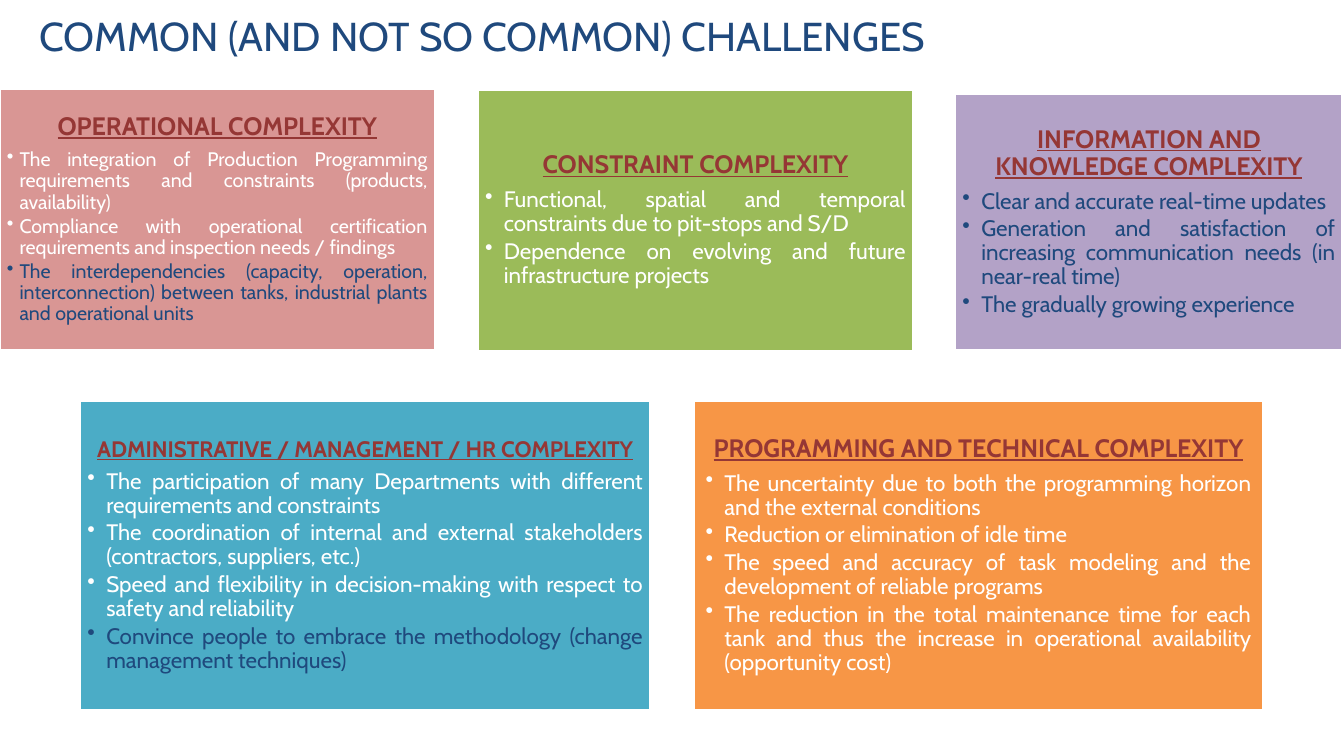
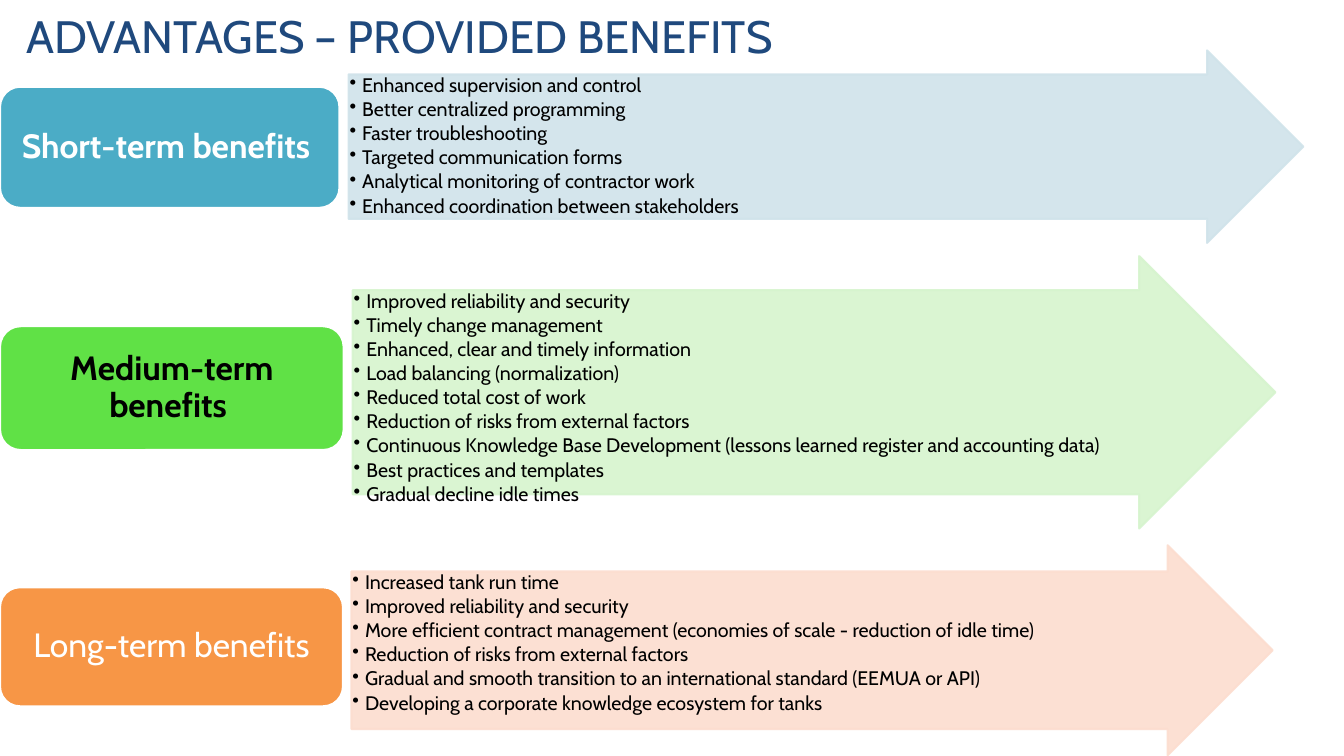
import pptx
import pptx.util
import pptx.dml.color
import pptx.enum.shapes
import pptx.enum.text
import pptx.oxml.ns
from lxml import etree

Pt = pptx.util.Pt
RGB = pptx.dml.color.RGBColor
SHAPE = pptx.enum.shapes.MSO_SHAPE
ALIGN = pptx.enum.text.PP_ALIGN
ANCHOR = pptx.enum.text.MSO_ANCHOR
qn = pptx.oxml.ns.qn

FONT = "Cabin"
NAVY = RGB(0x1F, 0x49, 0x7D)
MAROON = RGB(0x95, 0x37, 0x35)
WHITE = RGB(0xFF, 0xFF, 0xFF)
BLACK = RGB(0x00, 0x00, 0x00)
PINK = RGB(0xD9, 0x96, 0x94)
OLIVE = RGB(0x9B, 0xBB, 0x59)
LILAC = RGB(0xB3, 0xA2, 0xC7)
TEAL = RGB(0x4B, 0xAC, 0xC6)
ORANGE = RGB(0xF7, 0x96, 0x46)
GREEN = RGB(0x60, 0xE1, 0x46)
PALE_BLUE = RGB(0xD0, 0xE3, 0xEA)
PALE_GREEN = RGB(0xD6, 0xF4, 0xCE)
PALE_ORANGE = RGB(0xFC, 0xDD, 0xCF)

CHALLENGES = [
    dict(box=(0, 63.5, 310.5, 186.5), fill=PINK, heading="OPERATIONAL COMPLEXITY", size=14, items=[
        ("The integration of Production Programming requirements and constraints (products, availability)", WHITE),
        ("Compliance with operational certification requirements and inspection needs / findings", WHITE),
        ("The interdependencies (capacity, operation, interconnection) between tanks, "
         "industrial plants and operational units", NAVY)]),
    dict(box=(341.5, 64, 310.5, 186.5), fill=OLIVE, heading="CONSTRAINT COMPLEXITY", items=[
        ("Functional, spatial and temporal constraints due to pit-stops and S/D", WHITE),
        ("Dependence on evolving and future infrastructure projects", WHITE)]),
    dict(box=(682.5, 67, 276.5, 183), fill=LILAC, heading="INFORMATION AND KNOWLEDGE COMPLEXITY", items=[
        ("Clear and accurate real-time updates", NAVY),
        ("Generation and satisfaction of increasing communication needs (in near-real time)", NAVY),
        ("The gradually growing experience", NAVY)]),
    dict(box=(57.5, 286.5, 407, 220.5), fill=TEAL, heading="ADMINISTRATIVE / MANAGEMENT / HR COMPLEXITY",
         heading_size=16, items=[
        ("The participation of many Departments with different requirements and constraints", WHITE),
        ("The coordination of internal and external stakeholders (contractors, suppliers, etc.)", WHITE),
        ("Speed and flexibility in decision-making with respect to safety and reliability", WHITE),
        ("Convince people to embrace the methodology (change management techniques)", NAVY)]),
    dict(box=(495.5, 286.5, 407, 220.5), fill=ORANGE, heading="PROGRAMMING AND TECHNICAL COMPLEXITY",
         inset=8.5, items=[
        ("The uncertainty due to both the programming horizon and the external conditions", WHITE),
        ("Reduction or elimination of idle time", WHITE),
        ("The speed and accuracy of task modeling and the development of reliable programs", WHITE),
        ("The reduction in the total maintenance time for each tank and thus the increase in "
         "operational availability (opportunity cost)", WHITE)]),
]

BENEFITS = [
    dict(label="Short-term benefits ", label_box=(0, 62, 242.5, 86.5), fill=TEAL, color=WHITE, bold=True,
         arrow_box=(249, 36, 682, 137.5), tint=PALE_BLUE, items=[
        "Enhanced supervision and control",
        "Better centralized programming",
        "Faster troubleshooting",
        "Targeted communication forms",
        "Analytical monitoring of contractor work",
        "Enhanced coordination between stakeholders"]),
    dict(label="Medium-term benefits ", label_box=(0, 233, 245.5, 88.5), fill=GREEN, color=BLACK, bold=True,
         arrow_box=(252, 183, 659, 194.5), tint=PALE_GREEN, items=[
        "Improved reliability and security",
        "Timely change management",
        "Enhanced, clear and timely information",
        "Load balancing (normalization)",
        "Reduced total cost of work",
        "Reduction of risks from external factors",
        "Continuous Knowledge Base Development (lessons learned register and accounting data)",
        "Best practices and templates",
        "Gradual decline idle times"]),
    dict(label="Long-term benefits", label_box=(0, 419.5, 245, 85), fill=ORANGE, color=WHITE, bold=False,
         arrow_box=(251, 389.5, 658, 150), tint=PALE_ORANGE, items=[
        "Increased tank run time",
        "Improved reliability and security",
        "More efficient contract management (economies of scale - reduction of idle time)",
        "Reduction of risks from external factors",
        "Gradual and smooth transition to an international standard (EEMUA or API)",
        "Developing a corporate knowledge ecosystem for tanks"]),
]


def add_run(p, text, size, color, bold=False, underline=False):
    r = p.add_run()
    r.text = text
    r.font.name, r.font.size = FONT, Pt(size)
    r.font.bold, r.font.underline = bold, underline
    r.font.color.rgb = color


def add_titled_slide(prs, title, left, size):
    slide = prs.slides.add_slide(prs.slide_layouts[5])
    sp = slide.shapes.title
    sp.left, sp.top, sp.width, sp.height = Pt(left), Pt(0), Pt(677), Pt(50)
    tf = sp.text_frame
    tf.vertical_anchor = ANCHOR.MIDDLE
    tf.paragraphs[0].alignment = ALIGN.LEFT
    add_run(tf.paragraphs[0], title, size, NAVY)
    return slide


def add_box(slide, kind, box, fill, line=WHITE, inset=(7.2, 3.6), anchor=ANCHOR.MIDDLE):
    sp = slide.shapes.add_shape(kind, *map(Pt, box))
    sp.shadow.inherit = False
    sp.fill.solid()
    sp.fill.fore_color.rgb = fill
    sp.line.color.rgb = line
    sp.line.width = Pt(1.5)
    tf = sp.text_frame
    tf.word_wrap = True
    tf.vertical_anchor = anchor
    tf.margin_left = tf.margin_right = Pt(inset[0])
    tf.margin_top = tf.margin_bottom = Pt(inset[1])
    return sp


def set_opacity(sp, percent):
    for color in sp._element.spPr.iter(qn("a:srgbClr")):
        etree.SubElement(color, qn("a:alpha")).set("val", str(percent * 1000))


def add_heading(tf, text, size, color, bold, underline=False):
    p = tf.paragraphs[0]
    p.alignment = ALIGN.CENTER
    p.line_spacing = 0.9
    p.space_after = Pt(round(size * 0.35, 1))
    add_run(p, text, size, color, bold, underline)


def add_bullet(p, text, size, color, align):
    indent = Pt(9 if size == 14 else 13.5)
    pPr = p._p.get_or_add_pPr()
    pPr.set("marL", str(indent))
    pPr.set("indent", str(-indent))
    etree.SubElement(pPr, qn("a:buChar")).set("char", "•")
    p.alignment = align
    p.line_spacing = 0.9
    p.space_after = Pt(round(size * 0.15, 1))
    add_run(p, text, size, color)


def build_challenges(prs):
    slide = add_titled_slide(prs, "COMMON (AND NOT SO COMMON) CHALLENGES", 21, 28.8)
    for panel in CHALLENGES:
        sp = add_box(slide, SHAPE.RECTANGLE, panel["box"], panel["fill"], inset=(panel.get("inset", 5), 5))
        tf = sp.text_frame
        add_heading(tf, panel["heading"], panel.get("heading_size", 18), MAROON, True, True)
        for text, color in panel["items"]:
            add_bullet(tf.add_paragraph(), text, panel.get("size", 16), color, ALIGN.JUSTIFY)


def build_benefits(prs):
    slide = add_titled_slide(prs, "ADVANTAGES – PROVIDED BENEFITS", 11.5, 32.4)
    for term in BENEFITS:
        arrow = add_box(slide, SHAPE.RIGHT_ARROW, term["arrow_box"], term["tint"], term["tint"],
                        (0.7, 0.7), ANCHOR.TOP)
        arrow.adjustments[0], arrow.adjustments[1] = 0.75, 0.5
        set_opacity(arrow, 90)
        tf = arrow.text_frame
        for i, text in enumerate(term["items"]):
            p = tf.add_paragraph() if i else tf.paragraphs[0]
            add_bullet(p, text, 14, BLACK, ALIGN.LEFT)
        label = add_box(slide, SHAPE.ROUNDED_RECTANGLE, term["label_box"], term["fill"])
        add_heading(label.text_frame, term["label"], 24, term["color"], term["bold"])


def main():
    prs = pptx.Presentation()
    prs.slide_width, prs.slide_height = Pt(960), Pt(540)
    build_challenges(prs)
    build_benefits(prs)
    prs.save("out.pptx")


if __name__ == "__main__":
    main()
